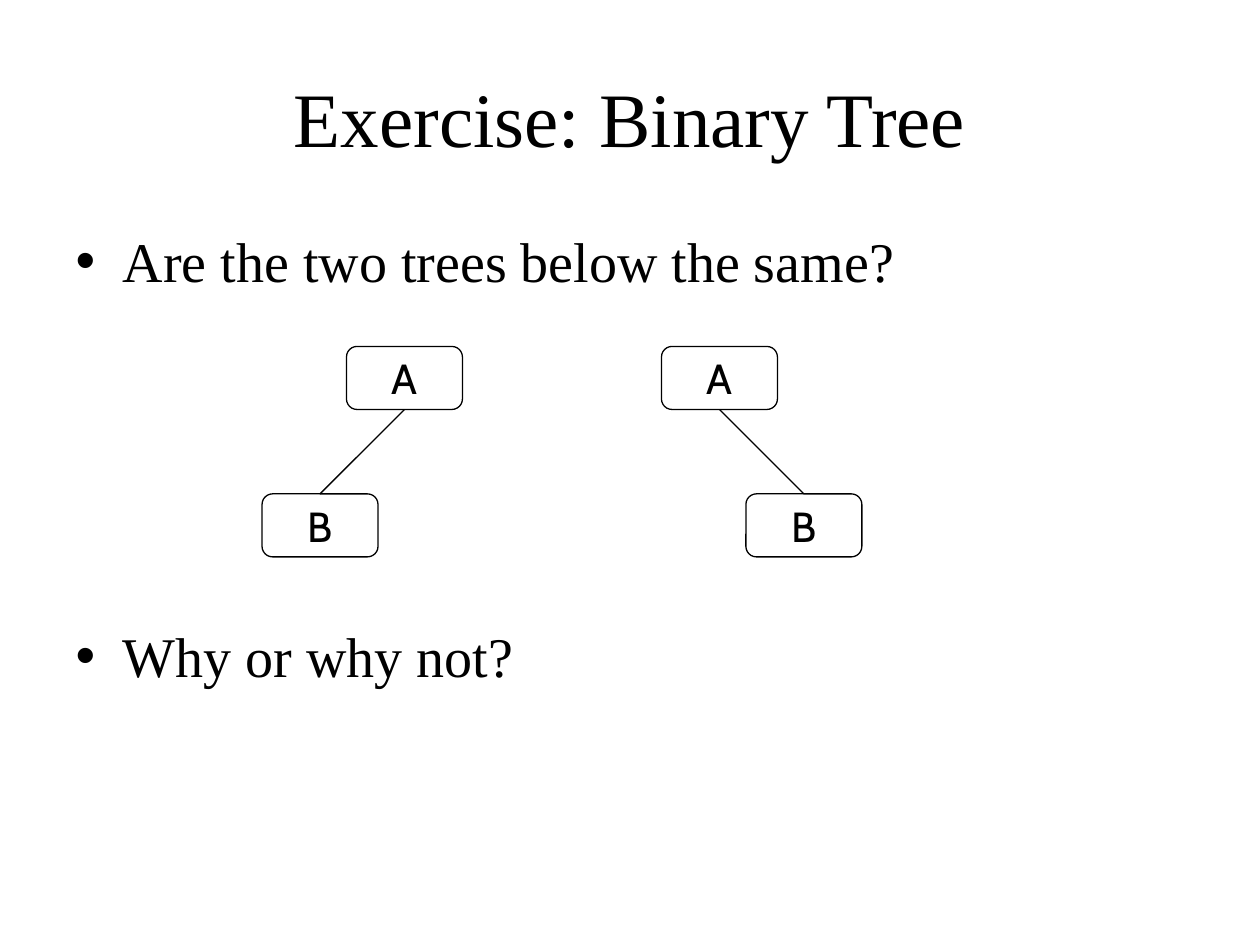
from pptx import Presentation
from pptx.dml.color import RGBColor
from pptx.enum.shapes import MSO_CONNECTOR, MSO_SHAPE
from pptx.enum.text import MSO_ANCHOR, MSO_AUTO_SIZE, PP_ALIGN
from pptx.oxml.ns import qn
from pptx.util import Inches, Pt
from lxml import etree

ROUND = MSO_SHAPE.ROUNDED_RECTANGLE
LINE = MSO_CONNECTOR.STRAIGHT
CENTER, LEFT = PP_ALIGN.CENTER, PP_ALIGN.LEFT
MIDDLE, TOP = MSO_ANCHOR.MIDDLE, MSO_ANCHOR.TOP
TOP_SIDE, BOTTOM_SIDE = 0, 2

# Content
TITLE = "Exercise: Binary Tree"
POINTS = [("Are the two trees below the same?", 4),  # text, space before
          ("Why or why not?", 187)]
# Each tree: left edge of the root, side of the child (-1 left, 1 right)
TREES = [(2.75, -1), (5.25, 1)]
ROOT, CHILD = "A", "B"

# Look and grid
COLORS = {"ink": "000000"}
SERIF, SANS = "Times New Roman", "Cabin"
WIDE, HIGH = 10, 7.5
MARGIN = 0.05 * WIDE
NODE_W, NODE_H = 0.92, 0.5
ROOT_Y, STEP_X, STEP_Y = 2.75, 0.67, 1.17

INK = RGBColor.from_string(COLORS["ink"])


def write(frame, items, size, font, align=LEFT, anchor=TOP, wrap=True):
    """Fill a text frame with (text, space before) paragraphs."""
    frame.auto_size = MSO_AUTO_SIZE.NONE
    frame.word_wrap = wrap
    frame.vertical_anchor = anchor
    for i, (text, gap) in enumerate(items):
        par = frame.add_paragraph() if i else frame.paragraphs[0]
        par.alignment = align
        par.space_before = Pt(gap)
        run = par.add_run()
        run.text = text
        run.font.size = Pt(size)
        run.font.name = font
        run.font.color.rgb = INK


def place(shape, x, y, w, h):
    shape.left, shape.top = Inches(x), Inches(y)
    shape.width, shape.height = Inches(w), Inches(h)


def draw_line(line):
    line.color.rgb = INK
    line.width = Pt(0.75)


def add_node(slide, text, x, y):
    node = slide.shapes.add_shape(
        ROUND, Inches(x), Inches(y), Inches(NODE_W), Inches(NODE_H))
    node.shadow.inherit = False
    node.fill.background()
    draw_line(node.line)
    write(node.text_frame, [(text, 0)], 24, SANS,
          align=CENTER, anchor=MIDDLE, wrap=False)
    return node


def add_edge(slide, root, child):
    edge = slide.shapes.add_connector(LINE, 0, 0, 0, 0)
    edge.begin_connect(root, BOTTOM_SIDE)
    edge.end_connect(child, TOP_SIDE)
    draw_line(edge.line)
    etree.SubElement(edge._element.spPr, qn("a:effectLst"))


def main():
    deck = Presentation()
    deck.slide_width, deck.slide_height = Inches(WIDE), Inches(HIGH)
    slide = deck.slides.add_slide(deck.slide_layouts[1])

    # Title and bullet list
    title, body = slide.placeholders
    place(title, MARGIN, 0.3, WIDE - 2 * MARGIN, 1.25)
    write(title.text_frame, [(TITLE, 0)], 44, SERIF,
          align=CENTER, anchor=MIDDLE)
    place(body, MARGIN, 1.75, WIDE - 2 * MARGIN, 4.92)
    write(body.text_frame, POINTS, 32, SERIF)

    # Two trees, mirrored
    for x, side in TREES:
        root = add_node(slide, ROOT, x, ROOT_Y)
        child = add_node(slide, CHILD, x + side * STEP_X, ROOT_Y + STEP_Y)
        add_edge(slide, root, child)

    deck.save("out.pptx")


if __name__ == "__main__":
    main()
